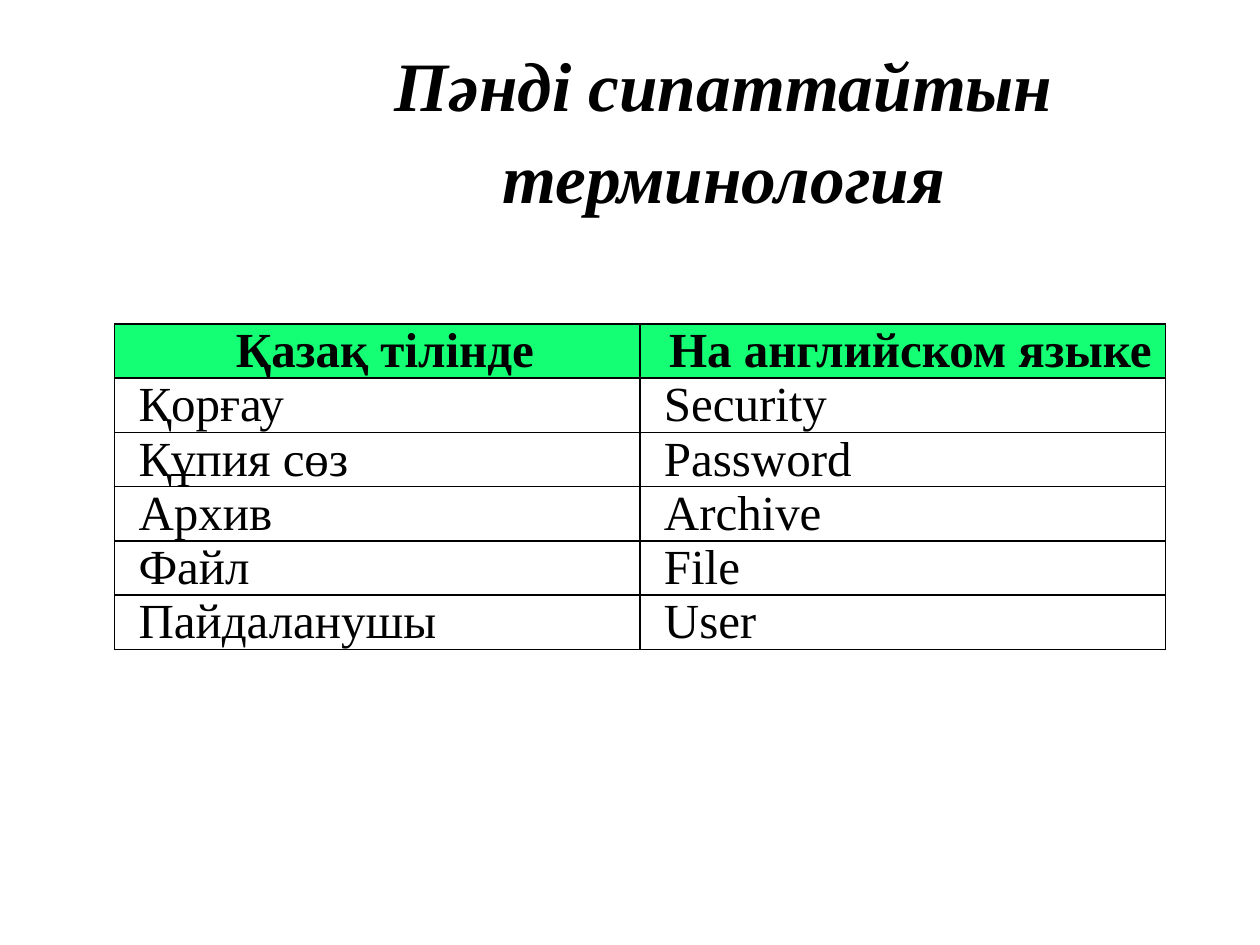
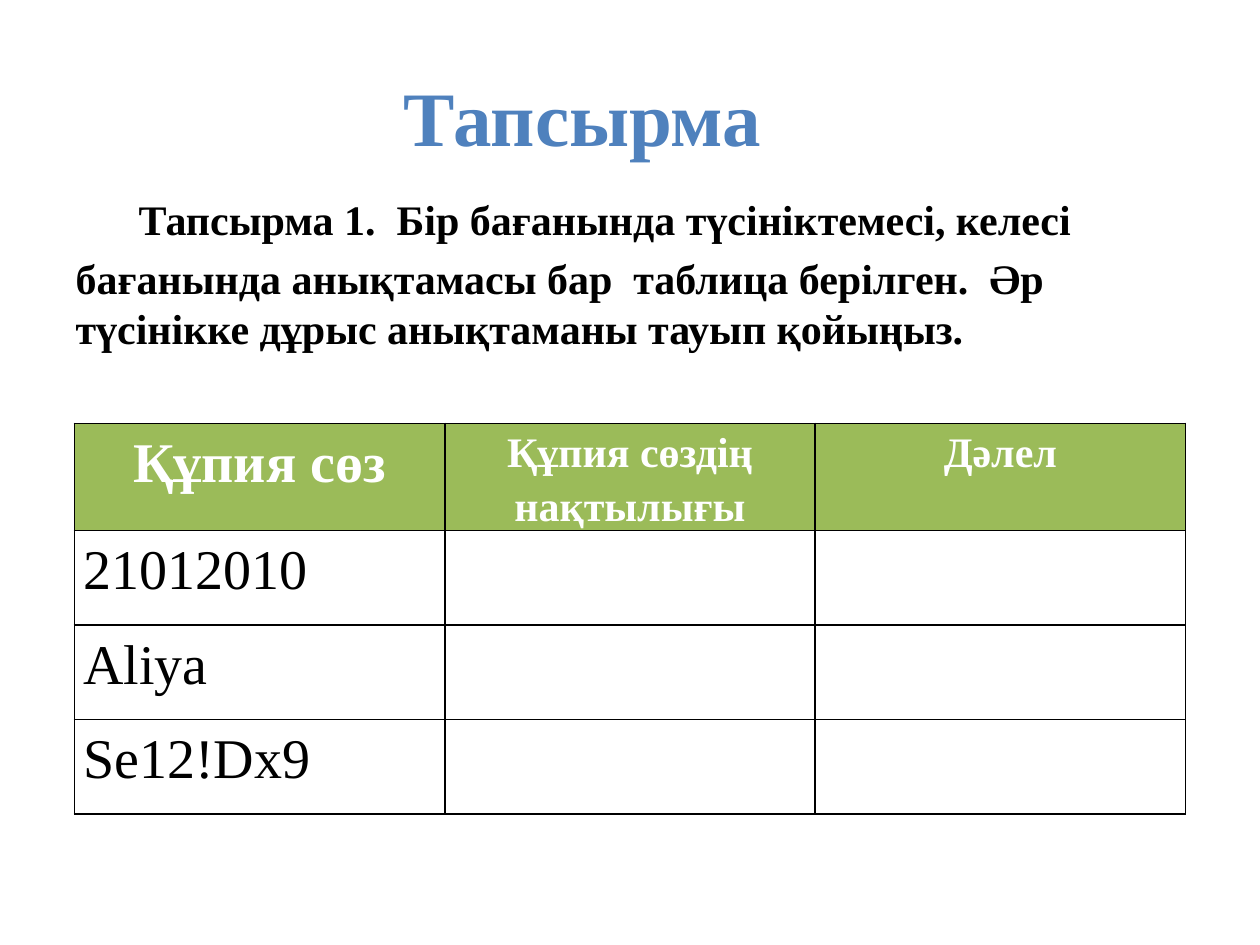
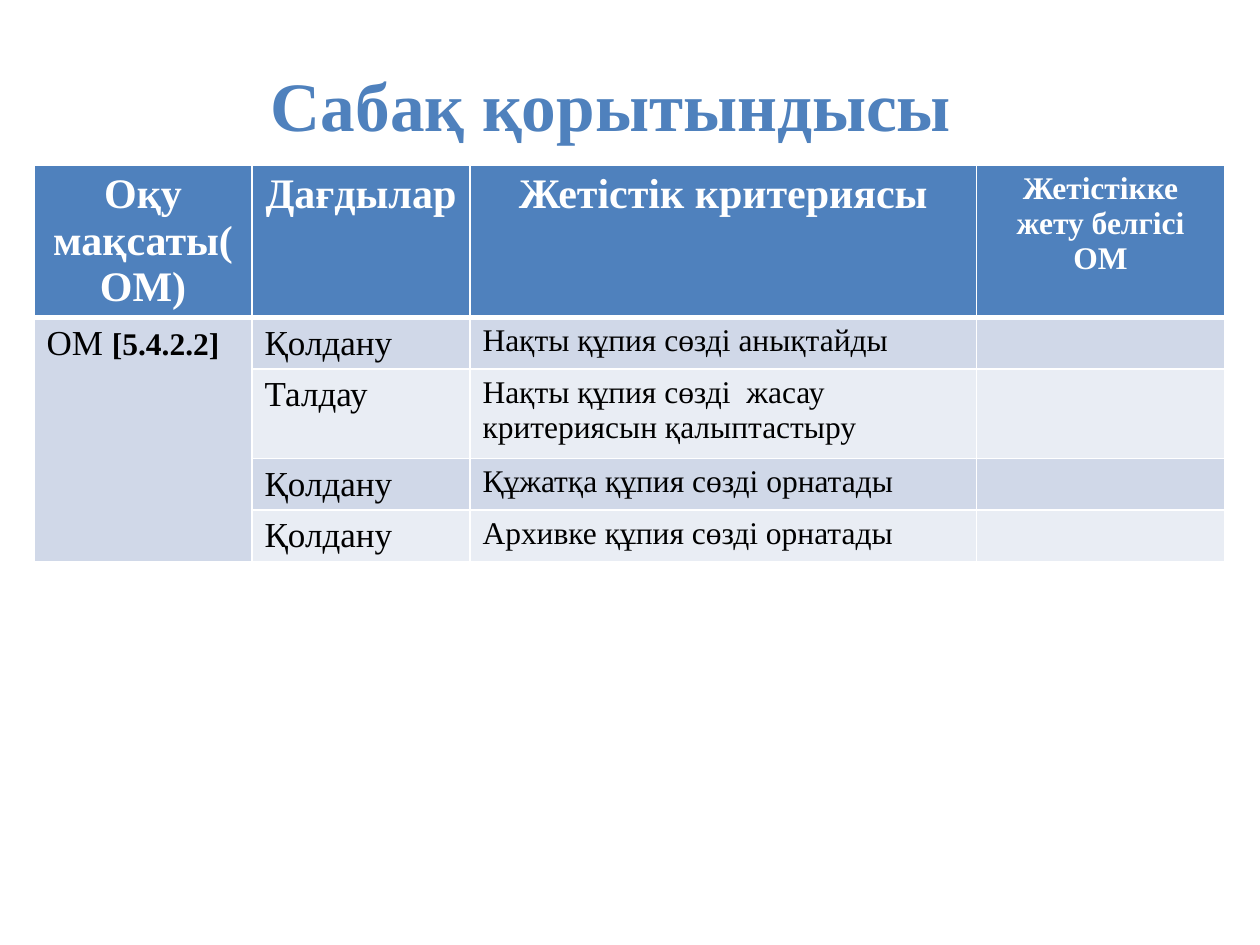
from dataclasses import dataclass

from lxml import etree
from pptx import Presentation
from pptx import util as u
from pptx.dml.color import RGBColor
from pptx.enum import text as t
from pptx.oxml.ns import qn


@dataclass(frozen=True)
class Theme:
    font: str = "Times New Roman"
    tab_font: str = "Calibri"
    black: str = "000000"
    white: str = "FFFFFF"
    blue: str = "4F81BD"
    mint: str = "15FF74"
    green: str = "9BBB59"
    bands: tuple = ("D0D8E8", "E9EDF4")
    title: float = 39.6
    large_title: float = 44
    tab: float = 48
    large: float = 32
    term: float = 28
    text: float = 24
    skill: float = 20
    small: float = 18


THEME = Theme()
TITLE_ONLY, TITLE_AND_BODY = 5, 1


def write(frame, content, align=t.PP_ALIGN.LEFT, spacing=None, indent=None, **font):
    """Fill one paragraph; content is a string or (string, font overrides) pairs."""
    paragraph = frame.paragraphs[0]
    paragraph.alignment = align
    if spacing:
        paragraph.line_spacing = spacing
    if indent:
        margin, first_line = indent
        properties = paragraph._p.get_or_add_pPr()
        properties.set("marL", str(u.Inches(margin)))
        properties.set("indent", str(u.Inches(first_line)))
    runs = [(content, {})] if isinstance(content, str) else content
    for words, overrides in runs:
        look = {"name": THEME.font, "size": THEME.text, "color": THEME.black,
                "bold": False, "italic": False, **font, **overrides}
        run = paragraph.add_run()
        run.text = words
        run.font.name = look["name"]
        run.font.size = u.Pt(look["size"])
        run.font.bold = look["bold"]
        run.font.italic = look["italic"]
        run.font.color.rgb = RGBColor.from_string(look["color"])
    return paragraph


def place(shape, left, top, width, height):
    shape.left, shape.top = u.Inches(left), u.Inches(top)
    shape.width, shape.height = u.Inches(width), u.Inches(height)


def add_titled_slide(deck, layout, title, box, **form):
    slide = deck.slides.add_slide(deck.slide_layouts[layout])
    heading = slide.shapes.title
    place(heading, *box)
    frame = heading.text_frame
    frame.auto_size = t.MSO_AUTO_SIZE.NONE
    frame.vertical_anchor = t.MSO_ANCHOR.MIDDLE
    write(frame, title, **{"align": t.PP_ALIGN.CENTER, "bold": True,
                           "size": THEME.title, **form})
    return slide


def add_task(slide, task, box):
    body = slide.placeholders[1]
    place(body, *box)
    body.text_frame.auto_size = t.MSO_AUTO_SIZE.NONE
    opening_tab = ("\t", {"name": THEME.tab_font, "size": THEME.tab, "bold": False})
    paragraph = write(body.text_frame, [opening_tab, (task, {})],
                      indent=(0, 0), bold=True)
    etree.SubElement(paragraph._p.get_or_add_pPr(), qn("a:buNone"))


def set_borders(cell, color, top=1, bottom=1):
    """Draw the four sides; call before the fill, which must follow them in the XML."""
    properties = cell._tc.get_or_add_tcPr()
    for side, points in (("L", 1), ("R", 1), ("T", top), ("B", bottom)):
        line = etree.SubElement(properties, qn(f"a:ln{side}"), w=str(u.Pt(points)))
        fill = etree.SubElement(line, qn("a:solidFill"))
        etree.SubElement(fill, qn("a:srgbClr"), val=color)


def add_grid(slide, rows, left, top, widths, heights, header_fill, header_sizes,
             body_sizes, header_color=THEME.white, bands=(None,), border=THEME.black,
             rule=1, insets=None, **form):
    """Add a table with a header row; rule is the line width below the header."""
    frame = slide.shapes.add_table(
        len(rows), len(widths), u.Inches(left), u.Inches(top),
        u.Inches(sum(widths)), u.Inches(sum(heights)))
    table = frame.table
    for column, width in zip(table.columns, widths):
        column.width = u.Inches(width)
    for row, height in zip(table.rows, heights):
        row.height = u.Inches(height)
    for r, row in enumerate(rows):
        header = r == 0
        fill = header_fill if header else bands[(r - 1) % len(bands)]
        sizes = header_sizes if header else body_sizes
        for c, content in enumerate(row):
            cell = table.cell(r, c)
            if insets:
                side, edge = map(u.Inches, insets)
                cell.margin_left = cell.margin_right = side
                cell.margin_top = cell.margin_bottom = edge
            set_borders(cell, border, top=rule if r == 1 else 1,
                        bottom=rule if header else 1)
            if fill:
                cell.fill.solid()
                cell.fill.fore_color.rgb = RGBColor.from_string(fill)
            else:
                cell.fill.background()
            if content:
                write(cell.text_frame, content, size=sizes[c], bold=header,
                      align=t.PP_ALIGN.CENTER if header else t.PP_ALIGN.LEFT,
                      color=header_color if header else THEME.black, **form)
    return table


def add_terminology(deck):
    slide = add_titled_slide(deck, TITLE_ONLY, "Пәнді сипаттайтын терминология",
                             (2.47, 0.37, 6.55, 1.25), italic=True, spacing=1.11)
    terms = [
        ("Қазақ тілінде", "На английском языке"),
        ("Қорғау", "Security"),
        ("Құпия сөз", "Password"),
        ("Архив", "Archive"),
        ("Файл", "File"),
        ("Пайдаланушы", "User"),
    ]
    sizes = [THEME.term] * 2
    add_grid(slide, terms, 0.91, 2.57, [4.17] * 2, [0.42] * len(terms), THEME.mint,
             sizes, sizes, header_color=THEME.black, insets=(0.07, 0),
             indent=(0.32, -0.2))


def add_password_task(deck):
    slide = add_titled_slide(deck, TITLE_AND_BODY, "Тапсырма",
                             (1.22, 0.44, 6.81, 0.95), size=THEME.large_title,
                             color=THEME.blue)
    add_task(slide, "Тапсырма 1.  Бір бағанында түсініктемесі, келесі бағанында "
                    "анықтамасы бар  таблица берілген.  Әр түсінікке дұрыс "
                    "анықтаманы тауып қойыңыз.", (0.5, 1.15, 9, 6.06))
    passwords = [
        ("Құпия сөз", "Құпия сөздің нақтылығы", "Дәлел"),
        ("21012010", "", ""),
        ("Aliya", "", ""),
        ("Se12!Dx9", "", ""),
    ]
    add_grid(slide, passwords, 0.59, 3.36, [2.94] * 3, [0.85] + [0.75] * 3,
             THEME.green, (THEME.large, THEME.text, THEME.text), [THEME.large] * 3,
             insets=(0.07, 0), spacing=1.15)


def add_summary(deck):
    slide = add_titled_slide(deck, TITLE_ONLY, "Сабақ қорытындысы",
                             (0.35, 0.44, 9, 0.77), color=THEME.blue)
    objective = [("ОМ ", {}), ("[5.4.2.2]", {"size": THEME.small, "bold": True})]
    criteria = [
        ("Оқу мақсаты(ОМ)", "Дағдылар", "Жетістік критериясы",
         "Жетістікке жету белгісі ОМ"),
        (objective, "Қолдану", "Нақты құпия сөзді анықтайды", ""),
        ("", "Талдау", "Нақты құпия сөзді  жасау критериясын қалыптастыру", ""),
        ("", "Қолдану", "Құжатқа құпия сөзді орнатады", ""),
        ("", "Қолдану", "Архивке құпия сөзді орнатады", ""),
    ]
    table = add_grid(slide, criteria, 0.27, 1.31, (1.73, 1.73, 4.02, 1.97),
                     (1.21, 0.41, 0.71, 0.41, 0.41), THEME.blue,
                     [THEME.text] * 3 + [THEME.small],
                     [THEME.skill] * 2 + [THEME.small] * 2,
                     bands=THEME.bands, border=THEME.white, rule=3)
    table.cell(1, 0).merge(table.cell(len(criteria) - 1, 0))


def main():
    deck = Presentation()
    deck.slide_width, deck.slide_height = u.Inches(10), u.Inches(7.5)
    add_terminology(deck)
    add_password_task(deck)
    add_summary(deck)
    deck.save("out.pptx")


if __name__ == "__main__":
    main()
